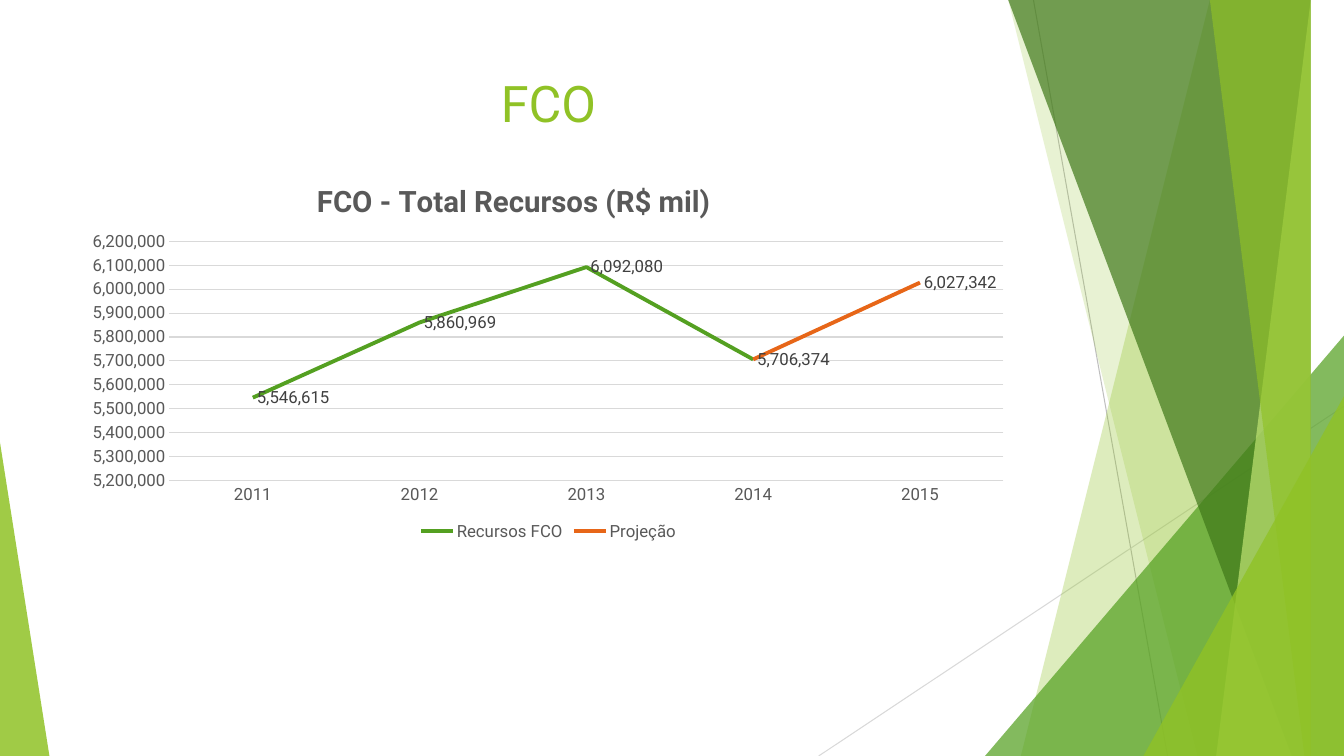
"""Build the FCO slide: green facets, a title and a line chart of resources."""
from dataclasses import dataclass

from lxml import etree
from pptx import Presentation
from pptx.chart.data import CategoryChartData
from pptx.dml.color import RGBColor
from pptx.enum import chart as ch, shapes, text
from pptx.oxml import ns, parse_xml
from pptx.util import Inches, Pt


@dataclass(frozen=True)
class Theme:
    font: str = "Roboto"
    lime: str = "90C226"
    green: str = "54A021"
    dark: str = "3F7819"
    pale: str = "C0E474"
    orange: str = "E76618"
    grey: str = "595959"
    ink: str = "404040"
    rule: str = "D9D9D9"
    edge: str = "BFBFBF"
    head: float = 36
    title: float = 21
    small: float = 12
    thin: float = 0.75
    thick: float = 2.75


@dataclass(frozen=True)
class Ray:
    start: tuple
    end: tuple
    color: str


@dataclass(frozen=True)
class Facet:
    top: float
    low: float
    color: str
    alpha: int


@dataclass(frozen=True)
class Wedge:
    box: tuple
    apex: float
    color: str
    alpha: int


@dataclass(frozen=True)
class Trend:
    name: str
    vals: tuple
    color: str


T = Theme()
WIDE, HIGH, RISE = 13.33, 7.5, -0.01
RAYS = (
    Ray((10.25, 0), (11.58, HIGH), T.edge),
    Ray((WIDE, 4.03), (8.12, HIGH), T.rule),
)
PANES = (
    Facet(12.28, 10.04, T.lime, 30),
    Facet(10.5, 11.83, T.lime, 20),
    Wedge((9.77, 3.33, 3.56, 4.17), 1, T.green, 72),
    Facet(10.21, 12.91, T.dark, 70),
    Facet(13.03, 11.92, T.pale, 70),
    Facet(11.96, 13.18, T.lime, 65),
    Wedge((11.34, 3.93, 1.99, 3.57), 1, T.lime, 80),
    Wedge((0, 4.39, 0.49, 3.11), 0, T.lime, 85),
)
YEARS = ("2011", "2012", "2013", "2014", "2015")
TRENDS = (
    Trend("Recursos FCO", (5546615, 5860969, 6092080, 5706374, None), T.green),
    Trend("Projeção", (None, None, None, 5706374, 6027342), T.orange),
)


def put(item, vals: dict) -> None:
    """Set each named attribute of an object."""
    for key, val in vals.items():
        setattr(item, key, val)


def style(font, size: float, color: str, bold: bool = False) -> None:
    """Give a font its face, size, weight and colour."""
    put(font, {"name": T.font, "size": Pt(size), "bold": bold})
    font.color.rgb = RGBColor.from_string(color)


def stroke(line, color: str, width: float) -> None:
    """Give a line its colour and width."""
    line.color.rgb = RGBColor.from_string(color)
    line.width = Pt(width)


def draw_ray(slide, ray: Ray) -> None:
    """Draw a thin straight line."""
    ends = [Inches(n) for n in ray.start + ray.end]
    line = slide.shapes.add_connector(shapes.MSO_CONNECTOR.STRAIGHT, *ends)
    stroke(line.line, ray.color, T.thin)
    etree.SubElement(line._element.spPr, ns.qn("a:effectLst"))


def draw_pane(slide, pane: Facet | Wedge) -> None:
    """Draw a translucent facet or wedge."""
    if isinstance(pane, Facet):
        form = slide.shapes.build_freeform(pane.top, RISE, scale=Inches(1))
        form.add_line_segments([(WIDE, RISE), (WIDE, HIGH), (pane.low, HIGH)])
        shape = form.convert_to_shape()
    else:
        box = [Inches(n) for n in pane.box]
        shape = slide.shapes.add_shape(shapes.MSO_SHAPE.ISOSCELES_TRIANGLE, *box)
        shape.adjustments[0] = pane.apex
    shape.shadow.inherit = False
    shape.fill.solid()
    shape.fill.fore_color.rgb = RGBColor.from_string(pane.color)
    shape.line.fill.background()
    tint = next(shape._element.spPr.iter(ns.qn("a:srgbClr")))
    etree.SubElement(tint, ns.qn("a:alpha"), val=str(pane.alpha * 1000))


def draw_head(slide) -> None:
    """Write the slide title."""
    box = [Inches(n) for n in (0.74, 0.67, 9.4, 1.44)]
    frame = slide.shapes.add_textbox(*box).text_frame
    put(frame, {"word_wrap": True, "vertical_anchor": text.MSO_ANCHOR.TOP})
    para = frame.paragraphs[0]
    put(para, {"text": "FCO", "alignment": text.PP_ALIGN.CENTER})
    style(para.runs[0].font, T.head, T.lime)


def layout(inner: bool, **vals: float):
    """Return a manual chart layout element."""
    parts = '<c:layoutTarget val="inner"/>' if inner else ""
    parts += "".join(f'<c:{k}Mode val="edge"/>' for k in "xy")
    parts += "".join(f'<c:{k} val="{v}"/>' for k, v in vals.items())
    return parse_xml(
        f'<c:layout {ns.nsdecls("c")}><c:manualLayout>{parts}'
        "</c:manualLayout></c:layout>"
    )


def dress(chart) -> None:
    """Style the title, legend, axes and plot area."""
    style(chart.font, T.small, T.grey)
    frame = chart.chart_title.text_frame
    frame.text = "FCO - Total Recursos (R$ mil)"
    style(frame.paragraphs[0].runs[0].font, T.title, T.grey, True)
    head = chart.chart_title._element
    head.find(ns.qn("c:tx")).addnext(layout(False, x=0.25, y=0.03))
    for old in head.findall(ns.qn("c:layout"))[1:]:
        head.remove(old)
    area = chart._chartSpace.chart.plotArea
    for old in area.findall(ns.qn("c:layout")):
        area.remove(old)
    area.insert(0, layout(True, x=0.1, y=0.2, w=0.88, h=0.63))
    chart.has_legend = True
    put(chart.legend, {"position": ch.XL_LEGEND_POSITION.BOTTOM,
                       "include_in_layout": False})
    style(chart.legend.font, T.small, T.grey)
    cat, val = chart.category_axis, chart.value_axis
    for axis in (cat, val):
        put(axis, {"major_tick_mark": ch.XL_TICK_MARK.NONE,
                   "minor_tick_mark": ch.XL_TICK_MARK.NONE})
        style(axis.tick_labels.font, T.small, T.grey)
    put(val, {"minimum_scale": 5200000, "maximum_scale": 6200000,
              "major_unit": 100000, "has_major_gridlines": True})
    put(val.tick_labels, {"number_format": "#,##0",
                          "number_format_is_linked": False})
    stroke(cat.format.line, T.rule, 1)
    stroke(val.major_gridlines.format.line, T.rule, T.thin)
    val.format.line.fill.background()


def draw_chart(slide) -> None:
    """Draw the line chart of yearly resources."""
    data = CategoryChartData(number_format="#,##0")
    data.categories = YEARS
    for trend in TRENDS:
        data.add_series(trend.name, trend.vals)
    box = [Inches(n) for n in (0.74, 1.64, 9.4, 3.77)]
    chart = slide.shapes.add_chart(ch.XL_CHART_TYPE.LINE, *box, data).chart
    dress(chart)
    plot = chart.plots[0]
    plot.vary_by_categories = False
    for trend, line in zip(TRENDS, plot.series):
        line.smooth = False
        line.marker.style = ch.XL_MARKER_STYLE.NONE
        stroke(line.format.line, trend.color, T.thick)
    past, plan = plot.series
    last = plan.points[len(YEARS) - 1].data_label
    plan.data_labels.show_value = False
    past.data_labels.show_value = True
    for label in (past.data_labels, last):
        style(label.font, T.small, T.ink)
        label.position = ch.XL_LABEL_POSITION.RIGHT


def main() -> None:
    """Build and save the slide."""
    deck = Presentation()
    put(deck, {"slide_width": Inches(WIDE), "slide_height": Inches(HIGH)})
    slide = deck.slides.add_slide(deck.slide_layouts[6])
    for ray in RAYS:
        draw_ray(slide, ray)
    for pane in PANES:
        draw_pane(slide, pane)
    draw_head(slide)
    draw_chart(slide)
    deck.save("out.pptx")


if __name__ == "__main__":
    main()
